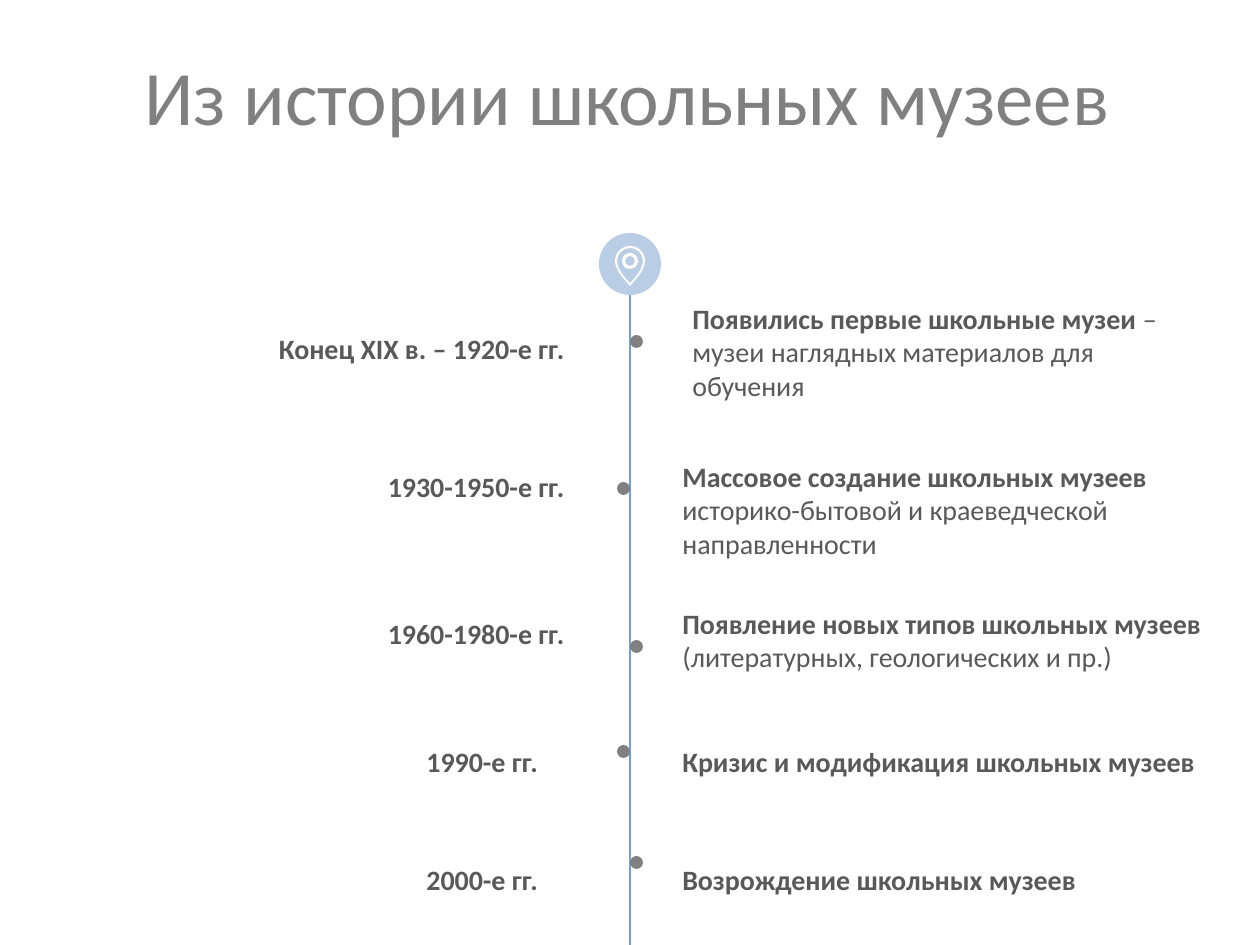
from lxml import etree
from pptx import Presentation
from pptx.dml.color import RGBColor
from pptx.enum.shapes import MSO_CONNECTOR, MSO_SHAPE
from pptx.enum.text import MSO_ANCHOR, PP_ALIGN
from pptx.oxml.ns import qn
from pptx.util import Pt

LEFT, RIGHT, CENTER = PP_ALIGN.LEFT, PP_ALIGN.RIGHT, PP_ALIGN.CENTER
BOTTOM = MSO_ANCHOR.BOTTOM
OVAL = MSO_SHAPE.OVAL
STRAIGHT = MSO_CONNECTOR.STRAIGHT

SCALE = 914400 / 126
WIDTH, HEIGHT = 1260, 945
AXIS = WIDTH // 2
DOT = 13
BEND = 0.55  # handle length that turns a cubic curve into a quarter circle
FONT = "Calibri"
COLORS = {
    "title": "808080",
    "text": "595959",
    "line": "71A1DC",
    "dot": "808080",
    "badge": "B9CDE5",
    "pin": "FFFFFF",
}

# Box: left, top, width, height, line spacing
# Row: date, date box, alignment, bold text, plain text, event box, dot top
ROWS = [
    ("Конец XIX в. – 1920-е гг.", (147, 325, 430, 50, 1), RIGHT,
     "Появились первые школьные музеи ",
     "– музеи наглядных материалов для обучения",
     (680, 295, 542, 98, 1), 335),
    ("1930-1950-е гг.", (305, 453, 272, 50, 1.3), RIGHT,
     "Массовое создание школьных музеев ",
     "историко-бытовой и краеведческой направленности",
     (670, 453, 522, 118, 1), 482),
    ("1960-1980-е гг.", (305, 600, 272, 50, 1.3), RIGHT,
     "Появление новых типов школьных музеев ",
     "(литературных, геологических и пр.)",
     (670, 600, 561, 98, 1), 640),
    ("1990-е гг.", (414, 738, 158, 50, 1), LEFT,
     "Кризис и модификация школьных музеев", "",
     (670, 728, 552, 59, 1.3), 745),
    ("2000-е гг.", (414, 856, 158, 50, 1), LEFT,
     "Возрождение школьных музеев", "",
     (670, 846, 444, 59, 1.3), 856),
]


def px(n):
    return round(n * SCALE)


def color(name):
    return RGBColor.from_string(COLORS[name])


def style(font, size, name, bold=False):
    font.name, font.size, font.bold = FONT, Pt(size), bold
    font.color.rgb = color(name)


def paint(shape, name):
    shape.shadow.inherit = False
    shape.fill.solid()
    shape.fill.fore_color.rgb = color(name)
    shape.line.fill.background()


def add_title(slide, text):
    title = slide.shapes.title
    title.left, title.top = px(82), px(16)
    title.width, title.height = px(1091), px(131)
    frame = title.text_frame
    frame.text = text
    frame.vertical_anchor = BOTTOM
    para = frame.paragraphs[0]
    para.alignment = CENTER
    style(para.runs[0].font, 44, "title")


def add_text(slide, box, align, bold, plain=""):
    *place, spacing = box
    frame = slide.shapes.add_textbox(*map(px, place)).text_frame
    frame.word_wrap = True
    para = frame.paragraphs[0]
    para.alignment, para.line_spacing = align, spacing
    for text, heavy in ((bold, True), (plain, False)):
        if text:
            run = para.add_run()
            run.text = text
            style(run.font, 16, "text", heavy)


def add_disc(slide, left, top, size, name):
    disc = slide.shapes.add_shape(OVAL, px(left), px(top), px(size), px(size))
    paint(disc, name)


def add_axis(slide, top):
    line = slide.shapes.add_connector(
        STRAIGHT, px(AXIS), px(top), px(AXIS), px(HEIGHT))
    line.line.color.rgb = color("line")
    line.line.width = Pt(0.75)
    etree.SubElement(line._element.spPr, qn("a:effectLst"))


def ring(x, y, r, drop, flat, steep):
    """Four cubic curves from the lowest point, which lies drop below y."""
    k = r * BEND
    return [(x, y + drop),
            (x - flat, y + drop - (drop - steep) / 4 * (drop > r)),
            (x - r, y + steep), (x - r, y),
            (x - r, y - k), (x - k, y - r), (x, y - r),
            (x + k, y - r), (x + r, y - k), (x + r, y),
            (x + r, y + steep),
            (x + flat, y + drop - (drop - steep) / 4 * (drop > r)),
            (x, y + drop)]


def circle(x, y, r):
    return ring(x, y, r, r, r * BEND, r * BEND)


def bend(shape):
    """Turn every three straight segments into one cubic curve."""
    lines = list(shape._element.iter(qn("a:lnTo")))
    for i in range(0, len(lines), 3):
        curve = etree.Element(qn("a:cubicBezTo"))
        lines[i].addprevious(curve)
        for line in lines[i:i + 3]:
            curve.append(line[0])
            line.getparent().remove(line)


def add_pin(slide, x, y):
    rings = [ring(x, y, 15, 25, 3, 10), ring(x, y, 13, 22, 4, 8),
             circle(x, y, 8), circle(x, y, 5)]
    rings = [[(px(a), px(b)) for a, b in points] for points in rings]
    build = slide.shapes.build_freeform(*rings[0][0])
    for i, points in enumerate(rings):
        if i:
            build.move_to(*points[0])
        build.add_line_segments(points[1:], close=True)
    pin = build.convert_to_shape()
    bend(pin)
    paint(pin, "pin")


def main():
    deck = Presentation()
    deck.slide_width, deck.slide_height = px(WIDTH), px(HEIGHT)
    slide = deck.slides.add_slide(deck.slide_layouts[5])
    add_title(slide, "Из истории школьных музеев")
    add_axis(slide, 295)
    add_disc(slide, AXIS - 31, 233, 62, "badge")
    add_pin(slide, AXIS, 261)
    for i, (date, spot, align, bold, plain, box, top) in enumerate(ROWS):
        add_text(slide, spot, align, date)
        add_text(slide, box, LEFT, bold, plain)
        add_disc(slide, AXIS - DOT * (i % 2), top, DOT, "dot")
    deck.save("out.pptx")


if __name__ == "__main__":
    main()
